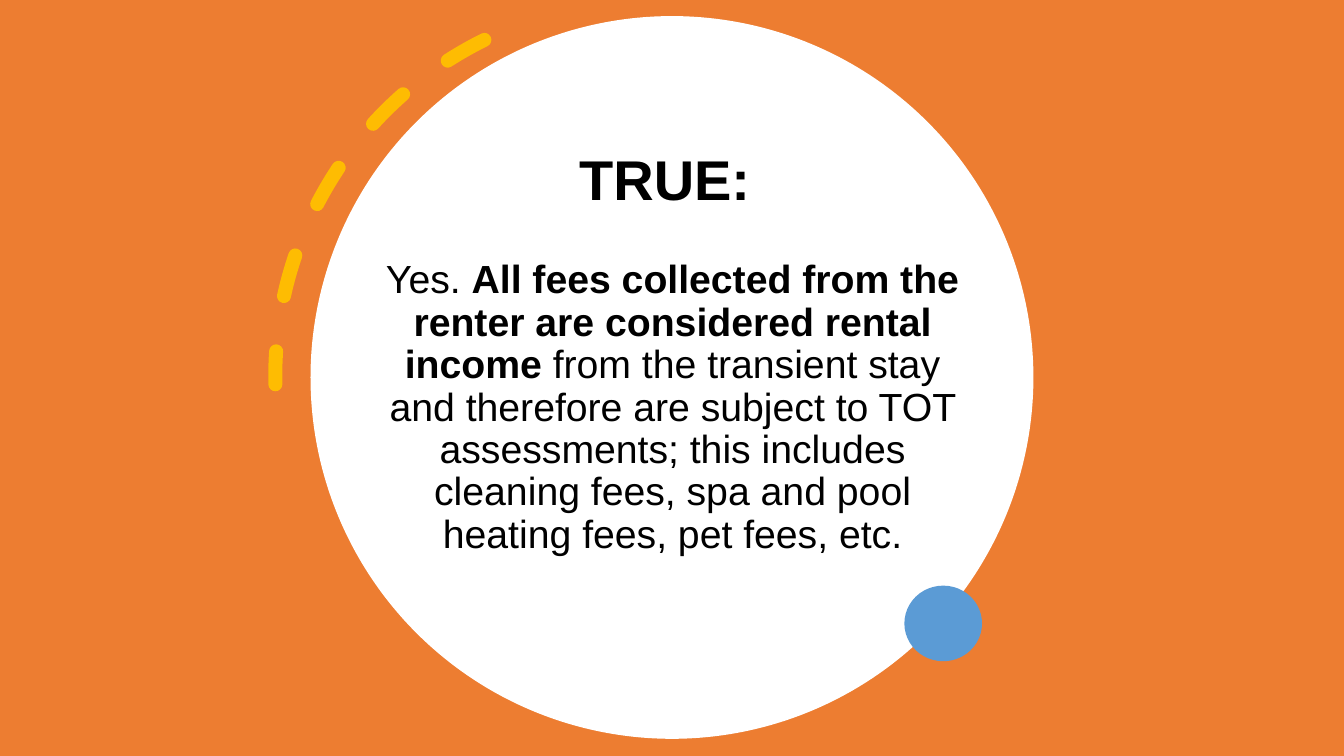
from dataclasses import dataclass

from lxml import etree
from pptx import Presentation
from pptx import util as u
from pptx.dml.color import RGBColor
from pptx.enum import dml, shapes, text
from pptx.oxml import ns


@dataclass(frozen=True)
class Theme:
    background: str = "ED7D31"
    disc: str = "FFFFFF"
    accent: str = "5B9BD5"
    dashes: str = "FFC000"
    ink: str = "000000"
    font: str = "Arial"
    heading_size: int = 40
    body_size: int = 28
    heading_gap: int = 34
    line_spacing: float = 0.9
    dash_width: int = 10


THEME = Theme()


def add_preset(slide, kind, left, top, width, height):
    shape = slide.shapes.add_shape(
        kind, u.Inches(left), u.Inches(top), u.Inches(width), u.Inches(height))
    shape.shadow.inherit = False
    return shape


def add_filled(slide, kind, box, color):
    shape = add_preset(slide, kind, *box)
    shape.fill.solid()
    shape.fill.fore_color.rgb = RGBColor.from_string(color)
    shape.line.fill.background()
    return shape


def add_dashed_arc(slide, box, rotation, start, end):
    arc = add_preset(slide, shapes.MSO_SHAPE.ARC, *box)
    arc.adjustments[0] = start
    arc.adjustments[1] = end
    arc.rotation = rotation
    arc.fill.background()
    arc.line.color.rgb = RGBColor.from_string(THEME.dashes)
    arc.line.width = u.Pt(THEME.dash_width)
    arc.line.dash_style = dml.MSO_LINE.DASH
    # Vertical flip, round caps and slight transparency
    properties = arc._element.spPr
    properties.find(ns.qn("a:xfrm")).set("flipV", "1")
    line = properties.find(ns.qn("a:ln"))
    line.set("cap", "rnd")
    color = line.find(".//" + ns.qn("a:srgbClr"))
    etree.SubElement(color, ns.qn("a:alpha")).set("val", "95000")
    return arc


def add_runs(paragraph, size, runs):
    paragraph.alignment = text.PP_ALIGN.CENTER
    paragraph.line_spacing = THEME.line_spacing
    for words, bold in runs:
        run = paragraph.add_run()
        run.text = words
        run.font.name = THEME.font
        run.font.size = u.Pt(size)
        run.font.bold = bold
        run.font.color.rgb = RGBColor.from_string(THEME.ink)


def add_answer(slide, left, top, width, height, heading, body):
    box = slide.shapes.add_textbox(
        u.Inches(left), u.Inches(top), u.Inches(width), u.Inches(height))
    frame = box.text_frame
    frame.word_wrap = True
    frame.vertical_anchor = text.MSO_ANCHOR.BOTTOM
    add_runs(frame.paragraphs[0], THEME.heading_size, heading)
    frame.paragraphs[0].space_after = u.Pt(THEME.heading_gap)
    add_runs(frame.add_paragraph(), THEME.body_size, body)


def main():
    presentation = Presentation()
    presentation.slide_width = u.Inches(13.33)
    presentation.slide_height = u.Inches(7.5)
    slide = presentation.slides.add_slide(presentation.slide_layouts[6])

    # Background and white disc
    add_filled(slide, shapes.MSO_SHAPE.RECTANGLE, (0, 0, 13.33, 7.5), THEME.background)
    add_filled(slide, shapes.MSO_SHAPE.OVAL, (3.08, 0.16, 7.17, 7.17), THEME.disc)

    # Answer
    add_answer(
        slide, 3.63, 2.82, 6.08, 2.75,
        heading=[("TRUE: ", True)],
        body=[
            ("Yes. ", False),
            ("All fees collected from the renter are considered rental income", True),
            (" from the transient stay and therefore are subject to TOT assessments; "
             "this includes cleaning fees, spa and pool heating fees, pet fees, etc.", False),
        ])

    # Decoration around the disc
    add_dashed_arc(slide, (2.73, 0.01, 7.45, 7.45), 153.7, 162, 200.93)
    add_filled(slide, shapes.MSO_SHAPE.OVAL, (8.97, 5.81, 0.77, 0.75), THEME.accent)

    presentation.save("out.pptx")


if __name__ == "__main__":
    main()
